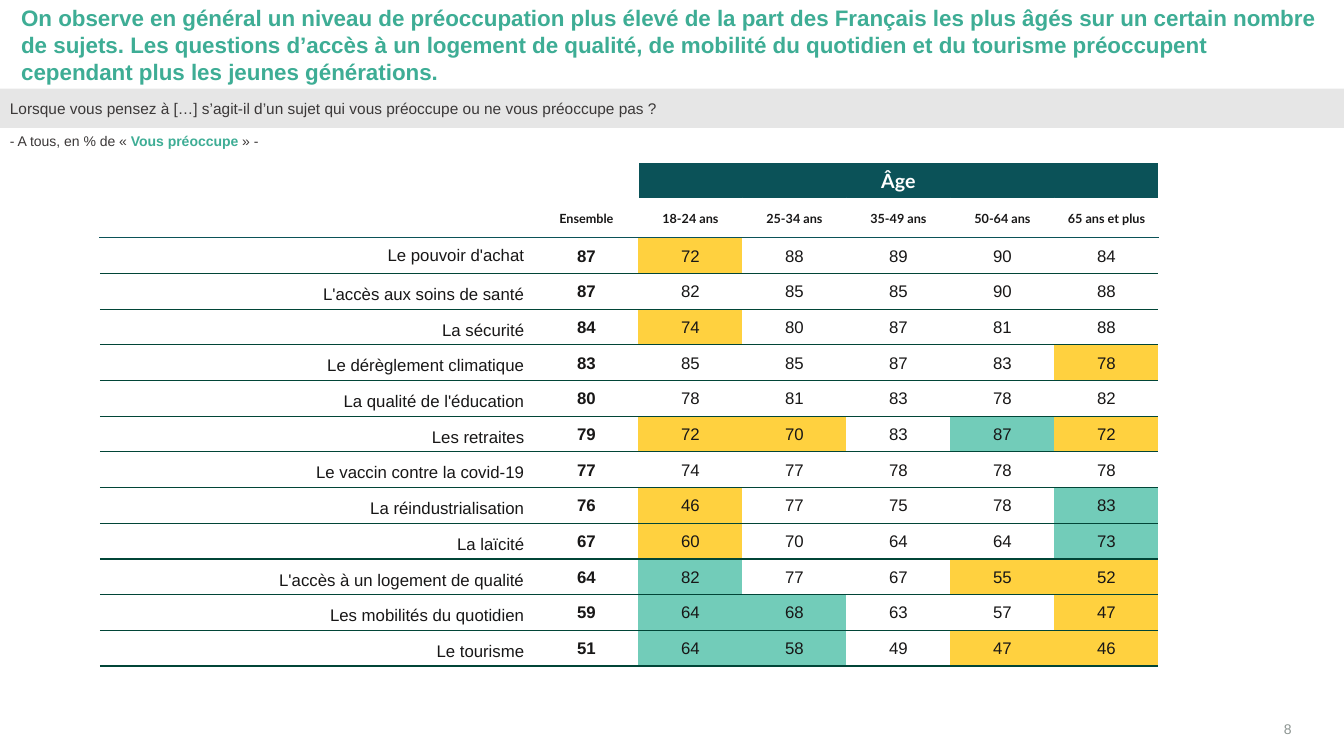
"""Build the slide on public concerns by age group."""
import pptx
import pptx.util
import pptx.dml.color
import pptx.enum.shapes
import pptx.enum.text
import pptx.oxml.ns
import lxml.etree

Inches, Pt = pptx.util.Inches, pptx.util.Pt
ALIGN = pptx.enum.text.PP_ALIGN
ANCHOR = pptx.enum.text.MSO_ANCHOR

COLORS = {
    "green": "3EAD95", "dark": "3B3838", "gray": "8C9491", "band": "E6E6E6",
    "white": "FFFFFF", "ink": "181717", "teal": "0B5258", "rule": "014537",
    "low": "FFD13F", "high": "72CCB9",
}
TITLE = (
    "On observe en général un niveau de préoccupation plus élevé de la part des "
    "Français les plus âgés sur un certain nombre de sujets. Les questions d’accès "
    "à un logement de qualité, de mobilité du quotidien et du tourisme préoccupent "
    "cependant plus les jeunes générations."
)
ASK = ("Lorsque vous pensez à […] s’agit-il d’un sujet qui vous préoccupe "
       "ou ne vous préoccupe pas ?")
BASE = [("- A tous, en % de « ", "dark", False),
        ("Vous préoccupe ", "green", True),
        ("» -", "dark", False)]
GROUP = "Âge"
HEADS = ["Ensemble", "18-24 ans", "25-34 ans", "35-49 ans", "50-64 ans", "65 ans et plus"]
ROWS = [
    ("Le pouvoir d'achat", (87, 72, 88, 89, 90, 84)),
    ("L'accès aux soins de santé", (87, 82, 85, 85, 90, 88)),
    ("La sécurité", (84, 74, 80, 87, 81, 88)),
    ("Le dérèglement climatique", (83, 85, 85, 87, 83, 78)),
    ("La qualité de l'éducation", (80, 78, 81, 83, 78, 82)),
    ("Les retraites", (79, 72, 70, 83, 87, 72)),
    ("Le vaccin contre la covid-19", (77, 74, 77, 78, 78, 78)),
    ("La réindustrialisation", (76, 46, 77, 75, 78, 83)),
    ("La laïcité", (67, 60, 70, 64, 64, 73)),
    ("L'accès à un logement de qualité", (64, 82, 77, 67, 55, 52)),
    ("Les mobilités du quotidien", (59, 64, 68, 63, 57, 47)),
    ("Le tourisme", (51, 64, 58, 49, 47, 46)),
]
MARKS = {
    "low": [(0, 1), (2, 1), (3, 5), (5, 1), (5, 2), (5, 5), (7, 1), (8, 1),
            (9, 4), (9, 5), (10, 5), (11, 4), (11, 5)],
    "high": [(5, 4), (7, 5), (8, 5), (9, 1), (10, 1), (10, 2), (11, 1), (11, 2)],
}
FILLS = {spot: tone for tone, spots in MARKS.items() for spot in spots}
SIDES = ("left", "top", "right", "bottom")
PLAIN = "{2D5ABB26-0587-4C30-8999-92F81FD0307C}"


def rgb(name):
    return pptx.dml.color.RGBColor.from_string(COLORS[name])


def put(item, **vals):
    for key, val in vals.items():
        setattr(item, key, val)


def pad(item, *gaps):
    put(item, **{f"margin_{side}": Inches(gap) for side, gap in zip(SIDES, gaps)})


def paint(item, tone):
    item.fill.solid()
    item.fill.fore_color.rgb = rgb(tone)


def write(frame, runs, size, align, font="Arial"):
    para = frame.paragraphs[0]
    para.alignment = align
    for text, tone, bold in runs:
        run = para.add_run()
        run.text = text
        put(run.font, size=Pt(size), name=font, bold=bold)
        run.font.color.rgb = rgb(tone)
    return para


def box(slide, spot, runs, size, align, anchor, gaps):
    shape = slide.shapes.add_textbox(*map(Inches, spot))
    put(shape.text_frame, word_wrap=True, vertical_anchor=anchor)
    pad(shape.text_frame, *gaps)
    return write(shape.text_frame, runs, size, align)


def edge(cell, **lines):
    props = cell._tc.get_or_add_tcPr()
    tag = pptx.oxml.ns.qn
    order = [side for side in "LRTB" if side in lines]
    for spot, side in enumerate(order):
        tone, width = lines[side]
        line = lxml.etree.Element(tag(f"a:ln{side}"), w=str(Pt(width)))
        fill = lxml.etree.SubElement(line, tag("a:solidFill"))
        lxml.etree.SubElement(fill, tag("a:srgbClr"), val=COLORS[tone])
        props.insert(spot, line)


def label(cell, text, size, tone="ink", bold=False, font="Arial",
          align=ALIGN.CENTER, anchor=ANCHOR.MIDDLE):
    cell.vertical_anchor = anchor
    write(cell.text_frame, [(text, tone, bold)], size, align, font)


def top(grid):
    cells = [grid.cell(0, col) for col in range(7)]
    cells[2].merge(cells[6])
    label(cells[2], GROUP, 14, "white", True, "Lato")
    paint(cells[2], "teal")
    thin, thick = ("white", 1), ("white", 3)
    for cell in cells:
        edge(cell, L=thin, R=thin, T=thin, B=thick)
    for col in range(7):
        cell = grid.cell(1, col)
        if col:
            label(cell, HEADS[col - 1], 9, bold=True, font="Lato")
            pad(cell, 0.05, 0.05, 0.05, 0.05)
        edge(cell, L=thin, R=thin, T=thick, B=("teal", 1))
    for cell in (cells[0], cells[1], grid.cell(1, 0)):
        para = cell.text_frame.paragraphs[0]._p
        lxml.etree.SubElement(para, pptx.oxml.ns.qn("a:endParaRPr"), sz="900")


def body(grid):
    for row, (name, vals) in enumerate(ROWS):
        head = grid.cell(row + 2, 0)
        label(head, name, 12, align=ALIGN.RIGHT,
              anchor=ANCHOR.BOTTOM if row else ANCHOR.MIDDLE)
        for col, val in enumerate(vals):
            cell = grid.cell(row + 2, col + 1)
            label(cell, str(val), 12, bold=col == 0)
            pad(cell, 0.01, 0.01, 0.01, 0)
            if (row, col) in FILLS:
                paint(cell, FILLS[row, col])
        for col in range(7):
            edge(grid.cell(row + 2, col), T=("rule" if row else "teal", 1), B=("rule", 1))


def table(slide):
    frame = slide.shapes.add_table(
        len(ROWS) + 2, 7, Inches(0.99), Inches(1.61), Inches(10.5), Inches(5))
    grid = frame.table
    put(grid, first_row=False, horz_banding=False)
    grid._tbl.tblPr.find(pptx.oxml.ns.qn("a:tableStyleId")).text = PLAIN
    for col, part in enumerate(grid.columns):
        part.width = Inches(6.19 / 6 if col else 4.31)
    tall = [0.37, 0.38] + [4.25 / len(ROWS)] * len(ROWS)
    for part, high in zip(grid.rows, tall):
        part.height = Inches(high)
    for cell in grid.iter_cells():
        cell.fill.background()
    top(grid)
    body(grid)


def main():
    deck = pptx.Presentation()
    put(deck, slide_width=Inches(13.33), slide_height=Inches(7.5))
    slide = deck.slides.add_slide(deck.slide_layouts[6])
    none = (0, 0, 0, 0)
    box(slide, (12.22, 7.07, 0.59, 0.24), [("8", "gray", False)], 10,
        ALIGN.RIGHT, ANCHOR.BOTTOM, none)
    para = box(slide, (0.11, 0.09, 12.96, 0.71), [(TITLE, "green", True)], 16,
               ALIGN.LEFT, ANCHOR.MIDDLE, none)
    para._p.get_or_add_pPr().set("marL", str(Inches(0.1)))
    band = slide.shapes.add_shape(
        pptx.enum.shapes.MSO_SHAPE.RECTANGLE, 0, Inches(0.88), Inches(13.33), Inches(0.39))
    band.shadow.inherit = False
    paint(band, "band")
    band.line.fill.background()
    put(band.text_frame, word_wrap=True, vertical_anchor=ANCHOR.MIDDLE)
    pad(band.text_frame, 0.1, 0.1, 0.2, 0.1)
    write(band.text_frame, [(ASK, "dark", False)], 11, ALIGN.JUSTIFY)
    box(slide, (0, 1.27, 13.33, 0.24), BASE, 10, ALIGN.LEFT, ANCHOR.TOP,
        (0.1, 0.05, 0.1, 0.05))
    table(slide)
    deck.save("out.pptx")


if __name__ == "__main__":
    main()
